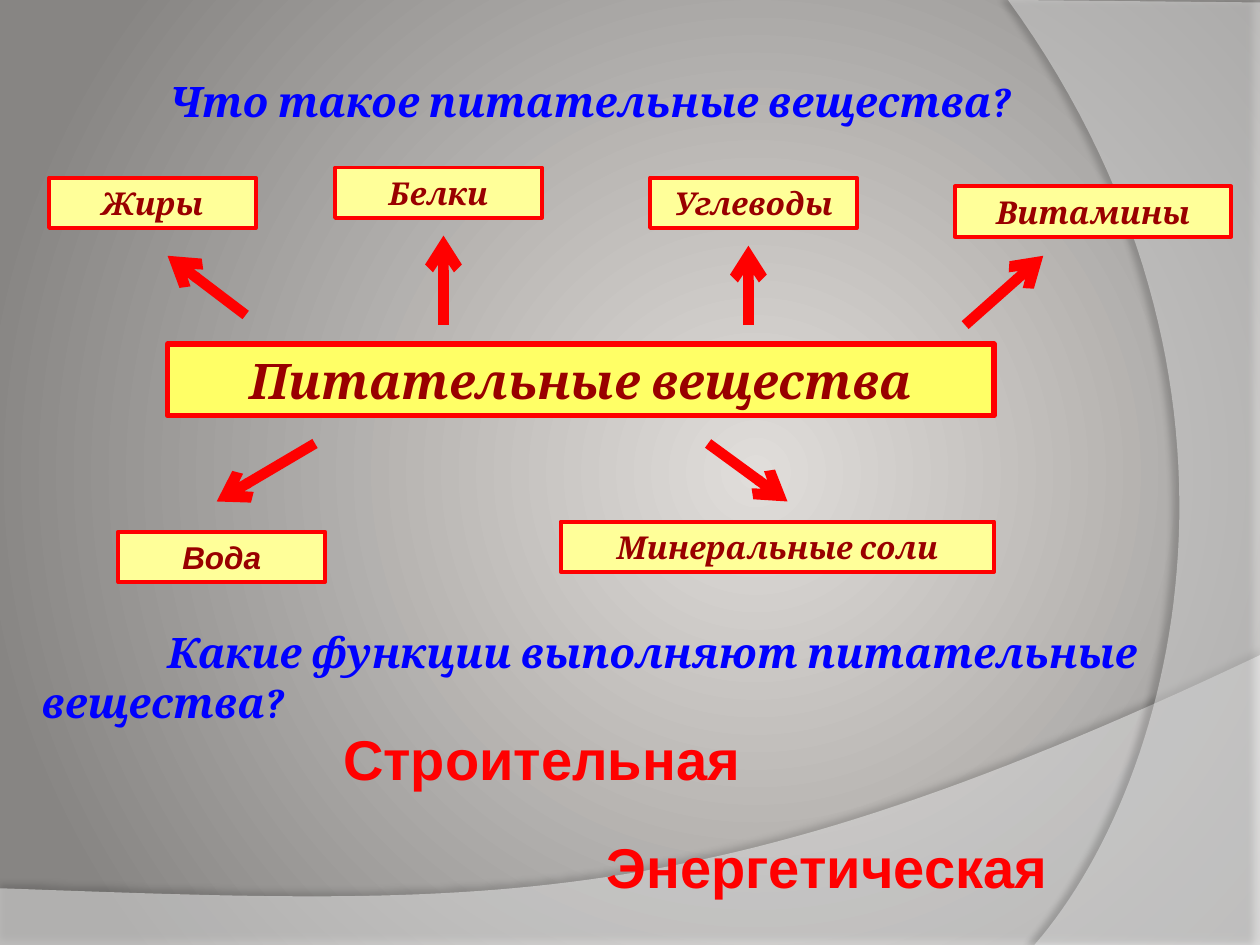
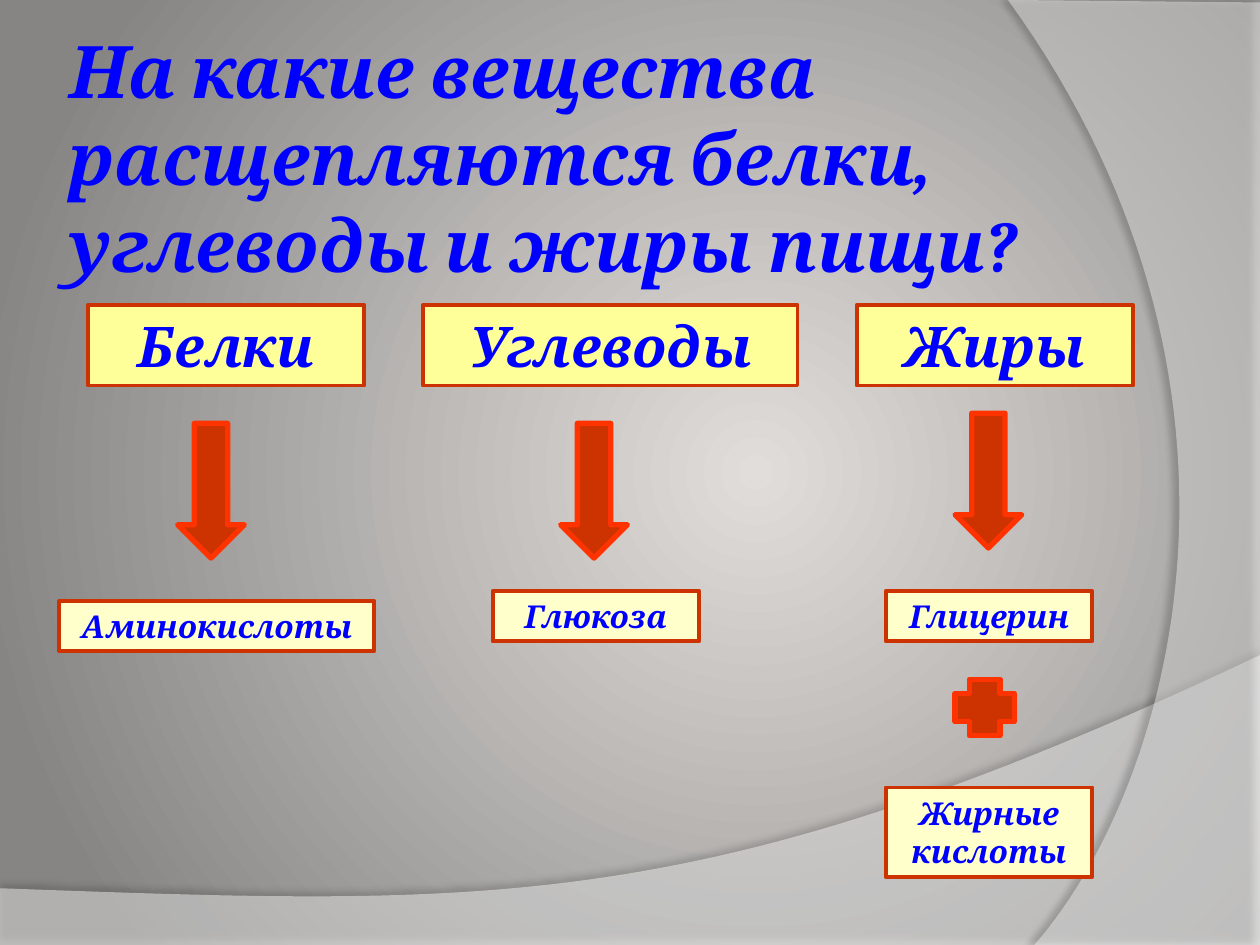
from dataclasses import dataclass

from lxml import etree
from pptx import Presentation
from pptx.dml.color import RGBColor
from pptx.enum import shapes as es, text as et
from pptx.oxml.ns import qn
from pptx.util import Emu, Inches, Pt

RED, BLUE, MAROON, RUST, ORANGE = "FF0000", "0000FF", "990000", "CC3300", "FF3300"
YELLOW, PALE, CREAM = "FFFF66", "FFFF99", "FFFFCC"
SERIF, SANS = "Cambria", "Arial"


@dataclass
class TextStyle:
    size: float
    color: str
    font: str = SERIF
    italic: bool = True
    align: et.PP_ALIGN = et.PP_ALIGN.CENTER


@dataclass
class BoxStyle:
    fill: str
    line: str
    weight: float
    text: TextStyle


@dataclass
class Box:
    text: str
    x: float
    y: float
    w: float
    h: float = 0.4


@dataclass
class Wave:
    points: list[tuple[float, float]]
    curve_at: int
    alpha: int
    shadow_alpha: int
    shadow_dist: float
    shadow_dir: int


QUESTION = TextStyle(24, BLUE, align=et.PP_ALIGN.LEFT)
HEADLINE = TextStyle(41.4, BLUE, align=et.PP_ALIGN.LEFT)
FUNCTION = TextStyle(32, RED, SANS, italic=False)
CENTRE = BoxStyle(YELLOW, RED, 3, TextStyle(28, MAROON))
NUTRIENT = BoxStyle(PALE, RED, 2.25, TextStyle(18, MAROON))
WATER = BoxStyle(PALE, RED, 2.25, TextStyle(18, MAROON, SANS))
SOURCE = BoxStyle(PALE, RUST, 2.25, TextStyle(32, BLUE))
PRODUCT = BoxStyle(CREAM, RUST, 2.25, TextStyle(18, BLUE))

WAVES = [
    Wave([(0, 7.05), (0, 7.5), (10, 7.5), (10, 5.2),
          (5.59, 7.29), (3.91, 7.19), (0, 7.05)], 3, 45, 35, 3.5, 270),
    Wave([(8, 0), (10, 0.02), (10, 7.5), (8.21, 7.5),
          (9.35, 6.19), (10.18, 3), (8, 0)], 3, 40, 45, 4, 180),
]


def rgb(value: str) -> RGBColor:
    return RGBColor.from_string(value)


def add(parent, tag: str, **attrs):
    return etree.SubElement(parent, qn(tag), {k: str(v) for k, v in attrs.items()})


def bezier(p0, p1, p2, p3, steps: int = 60) -> list[tuple[float, float]]:
    def at(t: float, axis: int) -> float:
        a, b, c, d = (p[axis] for p in (p0, p1, p2, p3))
        return (1 - t)**3 * a + 3 * (1 - t)**2 * t * b + 3 * (1 - t) * t**2 * c + t**3 * d
    return [(at(i / steps, 0), at(i / steps, 1)) for i in range(1, steps + 1)]


def paint_background(master) -> None:
    fill = master.background.fill
    fill.gradient()
    for stop, color in zip(fill.gradient_stops, ("E0DDDA", "878583")):
        stop.color.rgb = rgb(color)
    grad = master.element.find(".//" + qn("a:gradFill"))
    grad.remove(grad.find(qn("a:lin")))
    circle = add(grad, "a:path", path="circle")
    add(circle, "a:fillToRect", l=60000, t=50000, r=40000, b=50000)


def add_wave(s, master, wave: Wave, index: int) -> None:
    pts = wave.points[:wave.curve_at + 1] + bezier(*wave.points[wave.curve_at:])
    pts = [(Inches(x), Inches(y)) for x, y in pts]
    builder = s.shapes.build_freeform(*pts[0])
    builder.add_line_segments(pts[1:], close=True)
    sp = builder.convert_to_shape()
    sp.name = f"Wave {index + 1}"
    sp.fill.solid()
    sp.fill.fore_color.rgb = rgb("FFFFFF")
    sp.line.fill.background()
    props = sp.element.spPr
    add(props.find(".//" + qn("a:srgbClr")), "a:alpha", val=wave.alpha * 1000)
    shadow = add(add(props, "a:effectLst"), "a:outerShdw", blurRad=Pt(4),
                 dist=Pt(wave.shadow_dist), dir=wave.shadow_dir * 60000,
                 algn="ctr", rotWithShape=0)
    add(add(shadow, "a:srgbClr", val="000000"), "a:alpha", val=wave.shadow_alpha * 1000)
    sp.element.nvSpPr.cNvPr.set("id", str(20 + index))
    master.shapes.element.insert(2 + index, sp.element)


def place(sp, box: Box) -> None:
    sp.left, sp.top, sp.width, sp.height = map(Inches, (box.x, box.y, box.w, box.h))


def write(sp, text: str, style: TextStyle):
    tf = sp.text_frame
    tf.word_wrap = True
    tf.vertical_anchor = et.MSO_ANCHOR.TOP
    tf.auto_size = et.MSO_AUTO_SIZE.SHAPE_TO_FIT_TEXT
    p = tf.paragraphs[0]
    p.text = text
    p.alignment = style.align
    p.font.name, p.font.size = style.font, Pt(style.size)
    p.font.bold, p.font.italic = True, style.italic
    p.font.color.rgb = rgb(style.color)
    return p


def add_title(s, box: Box, style: TextStyle) -> et.MSO_ANCHOR:
    sp = s.shapes.title
    place(sp, box)
    write(sp, box.text, style)
    return sp.text_frame


def add_text(s, box: Box, style: TextStyle):
    sp = s.shapes.add_textbox(0, 0, 0, 0)
    place(sp, box)
    return write(sp, box.text, style)


def add_figure(s, kind: es.MSO_SHAPE, box: Box, fill: str, line: str, weight: float):
    sp = s.shapes.add_shape(kind, 0, 0, 0, 0)
    place(sp, box)
    sp.shadow.inherit = False
    sp.fill.solid()
    sp.fill.fore_color.rgb = rgb(fill)
    sp.line.color.rgb = rgb(line)
    sp.line.width = Pt(weight)
    return sp


def add_box(s, box: Box, style: BoxStyle) -> None:
    sp = add_figure(s, es.MSO_SHAPE.RECTANGLE, box, style.fill, style.line, style.weight)
    write(sp, box.text, style.text)


def add_arrow(s, x1: float, y1: float, x2: float, y2: float) -> None:
    cn = s.shapes.add_connector(es.MSO_CONNECTOR.STRAIGHT, *map(Inches, (x1, y1, x2, y2)))
    cn.line.color.rgb = rgb(RED)
    cn.line.width = Pt(6)
    add(cn.line._get_or_add_ln(), "a:tailEnd", type="arrow")
    add(cn.element.spPr, "a:effectLst")


def nutrients_slide(s) -> None:
    add_title(s, Box("Что такое питательные вещества?", 1.25, 0.55, 7.58, 0.51), QUESTION)
    p = add_text(s, Box("Какие функции выполняют питательные вещества?",
                        0.23, 4.92, 9.38, 0.91), QUESTION)
    p._p.get_or_add_pPr().set("indent", str(Inches(1)))
    add_box(s, Box("Питательные вещества", 1.33, 2.73, 6.56, 0.57), CENTRE)
    for box in (Box("Белки", 2.66, 1.33, 1.64), Box("Углеводы", 5.16, 1.41, 1.64),
                Box("Жиры", 0.39, 1.41, 1.64), Box("Витамины", 7.58, 1.48, 2.19),
                Box("Минеральные соли", 4.45, 4.14, 3.44)):
        add_box(s, box, NUTRIENT)
    add_box(s, Box("Вода", 0.94, 4.22, 1.64), WATER)
    add_text(s, Box("Строительная", 2.58, 5.7, 3.44, 0.64), FUNCTION)
    add_text(s, Box("Энергетическая", 4.69, 6.56, 3.75, 0.64), FUNCTION)
    for ends in ((1.95, 2.5, 1.33, 2.03), (7.66, 2.58, 8.28, 2.03),
                 (5.62, 3.52, 6.25, 3.98), (2.5, 3.52, 1.72, 3.98),
                 (3.52, 2.58, 3.52, 1.87), (5.94, 2.58, 5.94, 1.95)):
        add_arrow(s, *ends)


def breakdown_slide(s) -> None:
    tf = add_title(s, Box("На какие вещества расщепляются белки, углеводы и жиры пищи?",
                          0.5, 0.3, 8.88, 1.89), HEADLINE)
    tf.auto_size = et.MSO_AUTO_SIZE.NONE
    tf.vertical_anchor = et.MSO_ANCHOR.MIDDLE
    tf.margin_left = tf.margin_right = tf.margin_top = tf.margin_bottom = Inches(0.05)
    for box in (Box("Белки", 0.7, 2.42, 2.19, 0.64), Box("Углеводы", 3.36, 2.42, 2.97, 0.64),
                Box("Жиры", 6.8, 2.42, 2.19, 0.64)):
        add_box(s, box, SOURCE)
    for x, y in ((1.41, 3.36), (4.45, 3.36), (7.58, 3.28)):
        add_figure(s, es.MSO_SHAPE.DOWN_ARROW, Box("", x, y, 0.53, 1.07), RUST, ORANGE, 3)
    for box in (Box("Аминокислоты", 0.47, 4.77, 2.5), Box("Глюкоза", 3.91, 4.69, 1.64),
                Box("Глицерин", 7.03, 4.69, 1.64),
                Box("Жирные кислоты", 7.03, 6.25, 1.64, 0.71)):
        add_box(s, box, PRODUCT)
    add_figure(s, es.MSO_SHAPE.CROSS, Box("", 7.58, 5.39, 0.47, 0.45), RUST, ORANGE, 3)


def main() -> None:
    prs = Presentation()
    prs.slide_width, prs.slide_height = Inches(10), Inches(7.5)
    master = prs.slide_master
    paint_background(master)
    slides = [prs.slides.add_slide(prs.slide_layouts[5]) for _ in range(2)]
    for i, wave in enumerate(WAVES):
        add_wave(slides[0], master, wave, i)
    nutrients_slide(slides[0])
    breakdown_slide(slides[1])
    prs.save("out.pptx")


if __name__ == "__main__":
    main()
